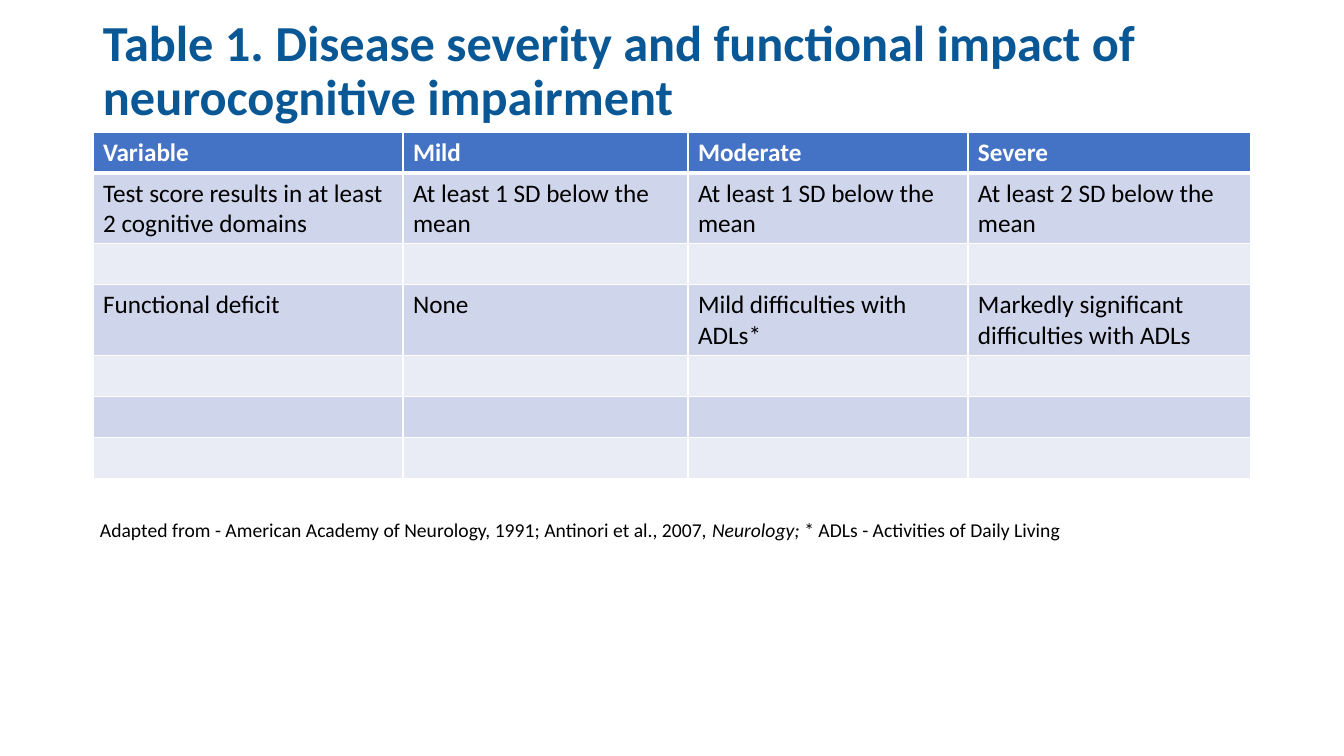
from lxml import etree
from pptx import Presentation
from pptx.dml.color import RGBColor
from pptx.enum.text import MSO_ANCHOR
from pptx.oxml.ns import qn
from pptx.util import Emu, Pt

MIDDLE = MSO_ANCHOR.MIDDLE
TITLE_BLUE = RGBColor(0x09, 0x58, 0x95)
HEADER_BLUE = RGBColor(0x44, 0x72, 0xC4)
BAND_DARK = RGBColor(0xCF, 0xD5, 0xEA)
BAND_LIGHT = RGBColor(0xE9, 0xEB, 0xF5)
WHITE = RGBColor(0xFF, 0xFF, 0xFF)
BLACK = RGBColor(0, 0, 0)


def px(n):
    return Emu(round(n * 12192000 / 1344))


def style(font, size, color, bold=False, italic=False):
    font.name = "Calibri"
    font.size = Pt(size)
    font.color.rgb = color
    font.bold = bold
    font.italic = italic


prs = Presentation()
prs.slide_width = px(1344)
prs.slide_height = px(756)
s = prs.slides.add_slide(prs.slide_layouts[6])

title = s.shapes.add_textbox(px(93), px(26), px(1159), px(92))
tf = title.text_frame
tf.word_wrap = True
tf.vertical_anchor = MIDDLE
p = tf.paragraphs[0]
p.text = "Table 1. Disease severity and functional impact of neurocognitive impairment"
p.line_spacing = 0.9
style(p.runs[0].font, 36, TITLE_BLUE, bold=True)

rows = [
    ["Variable", "Mild", "Moderate", "Severe"],
    ["Test score results in at least 2 cognitive domains", "At least 1 SD below the mean",
     "At least 1 SD below the mean", "At least 2 SD below the mean"],
    [""] * 4,
    ["Functional deficit", "None", "Mild difficulties with ADLs*",
     "Markedly significant difficulties with ADLs"],
    [""] * 4,
    [""] * 4,
    [""] * 4,
]
col_widths = [310, 285, 280, 283]

frame = s.shapes.add_table(len(rows), len(col_widths), px(93), px(132), px(1159), px(346))
table = frame.table
for col, width in zip(table.columns, col_widths):
    col.width = px(width)
for i, texts in enumerate(rows):
    table.rows[i].height = px(41)
    header = i == 0
    band = HEADER_BLUE if header else BAND_DARK if i % 2 else BAND_LIGHT
    for j, text in enumerate(texts):
        cell = table.cell(i, j)
        tcPr = cell._tc.get_or_add_tcPr()
        for side in ("lnL", "lnR", "lnT", "lnB"):
            thick = (i, side) in ((0, "lnB"), (1, "lnT"))
            ln = etree.SubElement(tcPr, qn(f"a:{side}"), w=str(Pt(3 if thick else 1)))
            fill = etree.SubElement(ln, qn("a:solidFill"))
            etree.SubElement(fill, qn("a:srgbClr"), val=str(WHITE))
        cell.fill.solid()
        cell.fill.fore_color.rgb = band
        p = cell.text_frame.paragraphs[0]
        if text:
            p.text = text
            style(p.runs[0].font, 18, WHITE if header else BLACK, bold=header)
        else:
            p.font.size = Pt(18)
frame.height = px(346)

source = s.shapes.add_textbox(px(90), px(513), px(1164), px(34))
tf = source.text_frame
tf.word_wrap = True
p = tf.paragraphs[0]
for text, italic in [
    ("Adapted from - American Academy of Neurology, 1991; Antinori et al., 2007, ", False),
    ("Neurology; ", True),
    ("* ADLs - Activities of Daily Living", False),
]:
    r = p.add_run()
    r.text = text
    style(r.font, 14, BLACK, italic=italic)

prs.save("out.pptx")
